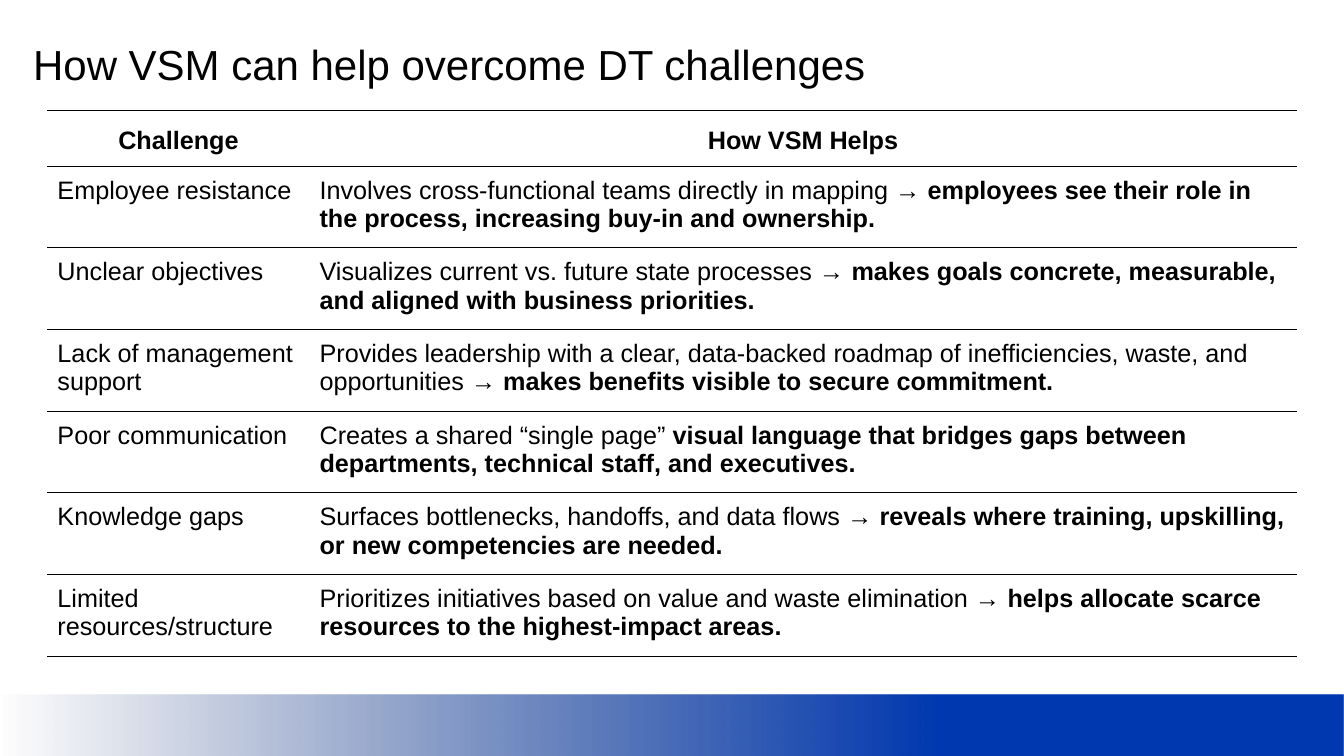
"""Build the slide on how VSM helps overcome DT challenges."""
from copy import deepcopy

from lxml import etree
from pptx import Presentation
from pptx import util as u
from pptx.dml.color import RGBColor
from pptx.enum import shapes, text
from pptx.oxml.ns import qn

COLORS = {"text": "000000", "rule": "000000", "fade": "002166", "band": "0039B1"}
FONT = "Arial"
W, H = u.Inches(13.33), u.Inches(7.5)
INSET = u.Inches(0.1)
COLS = [2.6, 9.79]
HEADER_H, ROW_H = 0.55, 0.81
HEADERS = ["Challenge", "How VSM Helps"]
ROWS = [
    ("Employee resistance",
     "Involves cross-functional teams directly in mapping → ",
     "employees see their role in the process, increasing buy-in and ownership."),
    ("Unclear objectives",
     "Visualizes current vs. future state processes → ",
     "makes goals concrete, measurable, and aligned with business priorities."),
    ("Lack of management support",
     "Provides leadership with a clear, data-backed roadmap of inefficiencies, waste, and opportunities → ",
     "makes benefits visible to secure commitment."),
    ("Poor communication",
     "Creates a shared “single page” ",
     "visual language that bridges gaps between departments, technical staff, and executives."),
    ("Knowledge gaps",
     "Surfaces bottlenecks, handoffs, and data flows → ",
     "reveals where training, upskilling, or new competencies are needed."),
    ("Limited resources/structure",
     "Prioritizes initiatives based on value and waste elimination → ",
     "helps allocate scarce resources to the highest-impact areas."),
]


def add_run(p, words, size, bold=False):
    r = p.add_run()
    r.text = words
    r.font.name, r.font.size, r.font.bold = FONT, u.Pt(size), bold
    r.font.color.rgb = RGBColor.from_string(COLORS["text"])


def style_cell(cell):
    cell.margin_left = cell.margin_right = INSET
    cell.margin_top = cell.margin_bottom = INSET
    cell.fill.background()
    tc_pr = cell._tc.get_or_add_tcPr()
    for i, side in enumerate(["lnL", "lnR", "lnT", "lnB"]):
        ln = etree.Element(qn(f"a:{side}"), w=str(u.Pt(0.75)))
        if side in ("lnT", "lnB"):
            fill = etree.SubElement(ln, qn("a:solidFill"))
            etree.SubElement(fill, qn("a:srgbClr"), val=COLORS["rule"])
        else:
            etree.SubElement(ln, qn("a:noFill"))
        tc_pr.insert(i, ln)


prs = Presentation()
prs.slide_width, prs.slide_height = W, H
s = prs.slides.add_slide(prs.slide_layouts[6])

band_h = u.Inches(0.61)
band = s.shapes.add_shape(shapes.MSO_SHAPE.RECTANGLE, 0, H - band_h, W, band_h)
band.shadow.inherit = False
band.line.fill.background()
band.fill.gradient()
band.fill.gradient_angle = 0
stops = band.fill.gradient_stops
for stop, position, name in zip(stops, [0, 0.7], ["fade", "band"]):
    stop.position = position
    stop.color.rgb = RGBColor.from_string(COLORS[name])
gs_list = band._element.spPr.find(".//" + qn("a:gsLst"))
etree.SubElement(gs_list[0][0], qn("a:alpha"), val="0")
last_stop = deepcopy(gs_list[1])
last_stop.set("pos", "100000")
gs_list.append(last_stop)

title = s.shapes.add_textbox(u.Inches(0.23), u.Inches(0.28), u.Inches(12.88), u.Inches(0.75))
tf = title.text_frame
tf.word_wrap = True
tf.margin_left = tf.margin_right = tf.margin_top = tf.margin_bottom = INSET
add_run(tf.paragraphs[0], "How VSM can help overcome DT challenges", 30)

table = s.shapes.add_table(
    len(ROWS) + 1, len(COLS), u.Inches(0.47), u.Inches(1.1),
    u.Inches(sum(COLS)), u.Inches(HEADER_H + ROW_H * len(ROWS))).table
table.first_row = table.horz_banding = False
for column, width in zip(table.columns, COLS):
    column.width = u.Inches(width)
for i, row in enumerate(table.rows):
    row.height = u.Inches(ROW_H if i else HEADER_H)
for cell in table.iter_cells():
    style_cell(cell)

for cell, header in zip(table.rows[0].cells, HEADERS):
    cell.vertical_anchor = text.MSO_ANCHOR.MIDDLE
    p = cell.text_frame.paragraphs[0]
    p.alignment, p.line_spacing = text.PP_ALIGN.CENTER, 1.15
    add_run(p, header, 18, bold=True)

for i, (challenge, action, benefit) in enumerate(ROWS, start=1):
    add_run(table.cell(i, 0).text_frame.paragraphs[0], challenge, 18)
    p = table.cell(i, 1).text_frame.paragraphs[0]
    add_run(p, action, 18)
    add_run(p, benefit, 18, bold=True)

prs.save("out.pptx")
